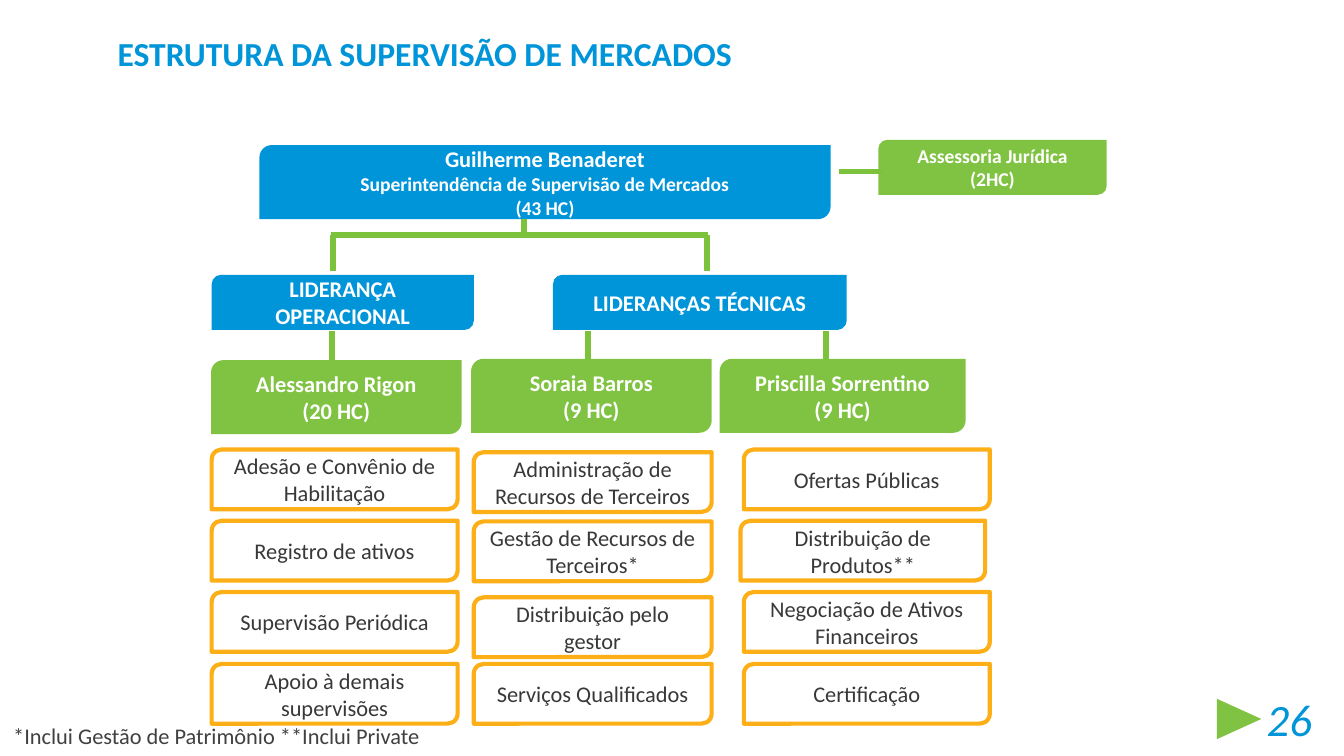
from dataclasses import dataclass

from lxml.etree import SubElement
from pptx import Presentation
from pptx.dml.color import RGBColor
from pptx.enum.shapes import MSO_CONNECTOR as Connector, MSO_SHAPE as Shape
from pptx.enum.text import MSO_ANCHOR as Anchor, PP_ALIGN as Align
from pptx.oxml.ns import qn
from pptx.util import Emu, Pt

EMU_PER_PX = 4572


@dataclass(frozen=True)
class Theme:
    font: str = "Calibri"
    title_blue: str = "0095D8"
    blue: str = "0095D9"
    green: str = "80C342"
    branch: str = "7DC23D"
    amber: str = "FCAF17"
    white: str = "FFFFFF"
    topic_ink: str = "383838"
    note_ink: str = "404040"
    title_size: float = 18
    number_size: float = 24
    body_size: float = 12
    small_size: float = 10.5
    outline: float = 2.25
    branch_width: float = 3


THEME = Theme()


@dataclass(frozen=True)
class Area:
    left: int
    top: int
    width: int
    height: int

    def emu(self) -> tuple[Emu, ...]:
        return tuple(map(px, (self.left, self.top, self.width, self.height)))


@dataclass(frozen=True)
class Line:
    text: str
    size: float = THEME.body_size


@dataclass(frozen=True)
class Unit:
    area: Area
    fill: str
    lines: tuple[Line, ...]


@dataclass(frozen=True)
class TopicColumn:
    left: int
    width: int
    tops: tuple[int, ...]
    topics: tuple[str, ...]


@dataclass(frozen=True)
class Branch:
    x1: int
    y1: int
    x2: int
    y2: int


def px(length: int) -> Emu:
    return Emu(length * EMU_PER_PX)


def rgb(color: str) -> RGBColor:
    return RGBColor.from_string(color)


def write(frame, lines: tuple[Line, ...], color: str, align: Align,
          bold: bool = False, italic: bool = False) -> None:
    for index, line in enumerate(lines):
        paragraph = frame.add_paragraph() if index else frame.paragraphs[0]
        paragraph.text = line.text
        paragraph.alignment = align
        font = paragraph.font
        font.name, font.size = THEME.font, Pt(line.size)
        font.bold, font.italic = bold, italic
        font.color.rgb = rgb(color)


def draw_box(slide, area: Area, fill: str, lines: tuple[Line, ...], ink: str,
             bold: bool = False, outline: str | None = None) -> None:
    box = slide.shapes.add_shape(Shape.ROUND_2_DIAG_RECTANGLE, *area.emu())
    box.shadow.inherit = False
    box.fill.solid()
    box.fill.fore_color.rgb = rgb(fill)
    if outline:
        box.line.color.rgb = rgb(outline)
        box.line.width = Pt(THEME.outline)
    else:
        box.line.fill.background()
    box.text_frame.vertical_anchor = Anchor.MIDDLE
    box.text_frame.word_wrap = True
    write(box.text_frame, lines, ink, Align.CENTER, bold)


def draw_unit(slide, unit: Unit) -> None:
    draw_box(slide, unit.area, unit.fill, unit.lines, THEME.white, bold=True)


def draw_topics(slide, column: TopicColumn) -> None:
    for top, topic in zip(column.tops, column.topics):
        draw_box(slide, Area(column.left, top, column.width, 89), THEME.white,
                 (Line(topic),), THEME.topic_ink, outline=THEME.amber)


def draw_branch(slide, branch: Branch) -> None:
    ends = map(px, (branch.x1, branch.y1, branch.x2, branch.y2))
    connector = slide.shapes.add_connector(Connector.STRAIGHT, *ends)
    connector.line.color.rgb = rgb(THEME.branch)
    connector.line.width = Pt(THEME.branch_width)
    SubElement(connector._element.spPr, qn("a:effectLst"))


def draw_text(slide, area: Area, line: Line, color: str, align: Align = Align.LEFT,
              bold: bool = False, italic: bool = False, wrap: bool = True,
              anchor: Anchor = Anchor.TOP, insets: tuple[int, int] = (20, 10)) -> None:
    frame = slide.shapes.add_textbox(*area.emu()).text_frame
    frame.word_wrap = wrap
    frame.vertical_anchor = anchor
    frame.margin_left = frame.margin_right = px(insets[0])
    frame.margin_top = frame.margin_bottom = px(insets[1])
    write(frame, (line,), color, align, bold, italic)


def draw_page_marker(slide, area: Area) -> None:
    marker = slide.shapes.add_shape(Shape.RIGHT_ARROW, *area.emu())
    marker.shadow.inherit = False
    marker.adjustments[0], marker.adjustments[1] = 0.66, 1.1
    marker.fill.solid()
    marker.fill.fore_color.rgb = rgb(THEME.green)
    marker.line.fill.background()


UNITS = (
    Unit(Area(386, 216, 850, 110), THEME.blue, (
        Line("Guilherme Benaderet"),
        Line("Superintendência de Supervisão de Mercados", THEME.small_size),
        Line("(43 HC)", THEME.small_size))),
    Unit(Area(1307, 208, 340, 82), THEME.green, (
        Line("Assessoria Jurídica", THEME.small_size),
        Line("(2HC)", THEME.small_size))),
    Unit(Area(315, 409, 390, 82), THEME.blue, (Line("LIDERANÇA OPERACIONAL"),)),
    Unit(Area(823, 409, 437, 82), THEME.blue, (Line("LIDERANÇAS TÉCNICAS"),)),
    Unit(Area(314, 536, 373, 110), THEME.green,
         (Line("Alessandro Rigon"), Line("(20 HC)"))),
    Unit(Area(701, 534, 358, 110), THEME.green,
         (Line("Soraia Barros"), Line("(9 HC)"))),
    Unit(Area(1071, 534, 366, 110), THEME.green,
         (Line("Priscilla Sorrentino"), Line("(9 HC)"))),
)

TOPIC_COLUMNS = (
    TopicColumn(315, 366, (669, 775, 881, 988), (
        "Adesão e Convênio de Habilitação", "Registro de ativos",
        "Supervisão Periódica", "Apoio à demais supervisões")),
    TopicColumn(705, 354, (673, 776, 889, 988), (
        "Administração de Recursos de Terceiros", "Gestão de Recursos de Terceiros*",
        "Distribuição pelo gestor", "Serviços Qualificados")),
    TopicColumn(1107, 366, (669, 881, 988), (
        "Ofertas Públicas", "Negociação de Ativos Financeiros", "Certificação")),
    TopicColumn(1102, 364, (775,), ("Distribuição de Produtos**",)),
)

BRANCHES = (
    *(Branch(x, 492, x, 536) for x in (494, 875, 1229)),
    Branch(1248, 255, 1314, 255),
    Branch(780, 326, 780, 346),
    Branch(492, 350, 1054, 350),
    *(Branch(x, 350, x, 404) for x in (496, 1052)),
)


def main() -> None:
    deck = Presentation()
    deck.slide_width, deck.slide_height = px(2000), px(1125)
    slide = deck.slides.add_slide(deck.slide_layouts[6])

    draw_text(slide, Area(163, 43, 1298, 74),
              Line("ESTRUTURA DA SUPERVISÃO DE MERCADOS", THEME.title_size),
              THEME.title_blue, bold=True, insets=(12, 6))
    for unit in UNITS:
        draw_unit(slide, unit)
    for column in TOPIC_COLUMNS:
        draw_topics(slide, column)
    for branch in BRANCHES:
        draw_branch(slide, branch)
    draw_text(slide, Area(0, 1065, 660, 60),
              Line("*Inclui Gestão de Patrimônio **Inclui Private"),
              THEME.note_ink, wrap=False)
    draw_text(slide, Area(1468, 1040, 504, 60), Line("26", THEME.number_size),
              THEME.blue, Align.RIGHT, italic=True, anchor=Anchor.MIDDLE)
    draw_page_marker(slide, Area(1811, 1040, 66, 60))

    deck.save("out.pptx")


if __name__ == "__main__":
    main()
